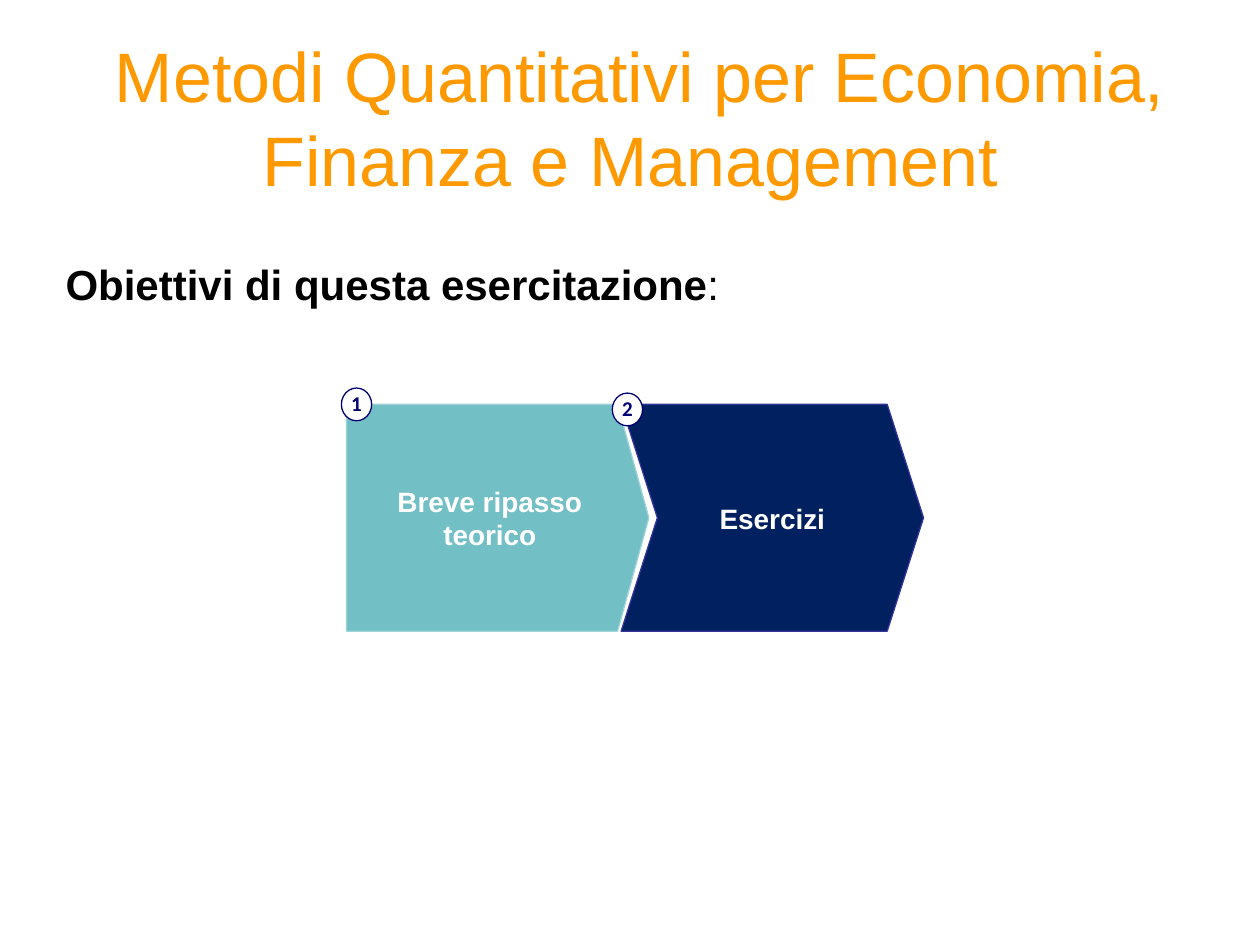
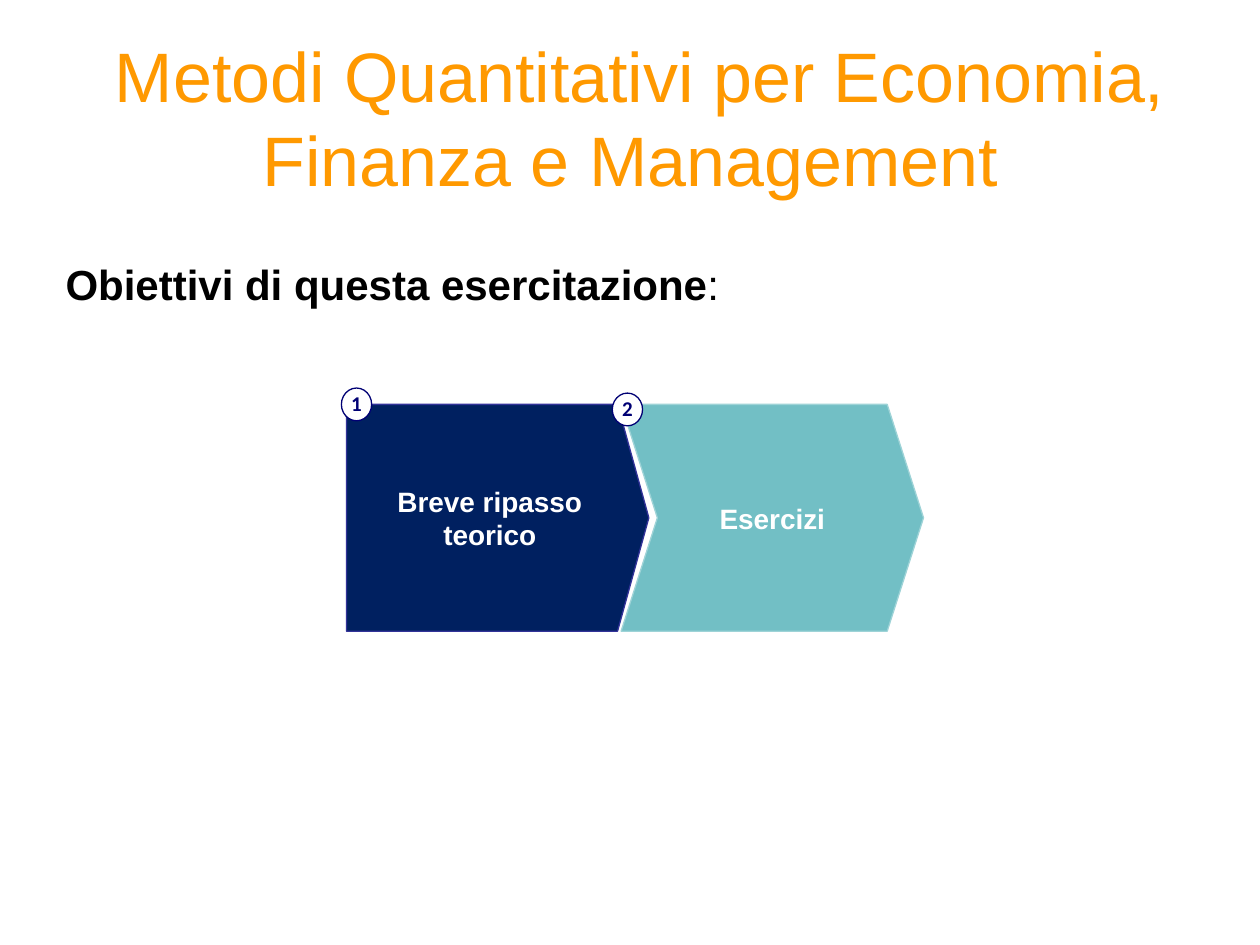
from dataclasses import dataclass

from lxml import etree
from pptx import Presentation
from pptx.dml.color import RGBColor
from pptx.enum import shapes, text
from pptx.oxml import ns
from pptx.util import Emu, Inches, Pt

COLUMNS, ROWS = 100, 75


@dataclass(frozen=True)
class Theme:
    heading: str = "FF9900"
    ink: str = "000000"
    paper: str = "FFFFFF"
    badge: str = "000074"
    active: tuple[str, str] = ("72BFC5", "9ED3D7")  # fill, line
    idle: tuple[str, str] = ("002060", "333399")
    font: str = "Arial"
    badge_font: str = "Calibri"
    heading_size: int = 40
    lead_size: int = 24
    step_size: int = 16
    badge_size: int = 12
    line_width: float = 0.75


@dataclass(frozen=True)
class Area:
    """Left, top, width and height in grid columns and rows."""
    left: float
    top: float
    width: float
    height: float


@dataclass(frozen=True)
class Step:
    label: str
    outline: shapes.MSO_SHAPE
    point: float
    area: Area
    badge: Area


THEME = Theme()
HEADING = " Metodi Quantitativi per Economia, Finanza e Management"
HEADING_AREA = Area(5, 3, 90, 12.5)
LEAD = "Obiettivi di questa esercitazione"
LEAD_AREA = Area(3.3, 20, 95, 35.3)
STEPS = (
    Step("Breve ripasso teorico", shapes.MSO_SHAPE.PENTAGON, 0.138,
         Area(27.5, 32.1, 24, 18), Area(27.1, 30.8, 2.4, 2.6)),
    Step("Esercizi", shapes.MSO_SHAPE.CHEVRON, 0.16,
         Area(49.3, 32.1, 24, 18), Area(48.6, 31.2, 2.4, 2.6)),
)


def place(prs, area: Area) -> tuple[Emu, Emu, Emu, Emu]:
    column, row = prs.slide_width / COLUMNS, prs.slide_height / ROWS
    return (Emu(round(area.left * column)), Emu(round(area.top * row)),
            Emu(round(area.width * column)), Emu(round(area.height * row)))


def move(prs, holder, area: Area) -> None:
    holder.left, holder.top, holder.width, holder.height = place(prs, area)


def add_run(paragraph, words: str, size: int, color: str,
            bold: bool = False, font: str = THEME.font) -> None:
    run = paragraph.add_run()
    run.text = words
    run.font.name, run.font.size, run.font.bold = font, Pt(size), bold
    run.font.color.rgb = RGBColor.from_string(color)


def add_figure(prs, slide, outline: shapes.MSO_SHAPE, area: Area, fill: str, line: str):
    figure = slide.shapes.add_shape(outline, *place(prs, area))
    figure.shadow.inherit = False
    figure.fill.solid()
    figure.fill.fore_color.rgb = RGBColor.from_string(fill)
    figure.line.color.rgb = RGBColor.from_string(line)
    figure.line.width = Pt(THEME.line_width)
    figure.text_frame.vertical_anchor = text.MSO_ANCHOR.MIDDLE
    figure.text_frame.paragraphs[0].alignment = text.PP_ALIGN.CENTER
    return figure


def add_heading(prs, slide) -> None:
    title = slide.shapes.title
    move(prs, title, HEADING_AREA)
    frame = title.text_frame
    frame.auto_size = text.MSO_AUTO_SIZE.NONE
    frame.vertical_anchor = text.MSO_ANCHOR.MIDDLE
    paragraph = frame.paragraphs[0]
    paragraph.alignment = text.PP_ALIGN.CENTER
    add_run(paragraph, HEADING, THEME.heading_size, THEME.heading)


def add_lead(prs, slide) -> None:
    body = slide.placeholders[1]
    move(prs, body, LEAD_AREA)
    body.text_frame.auto_size = text.MSO_AUTO_SIZE.NONE
    paragraph = body.text_frame.paragraphs[0]
    # Indented line without a bullet
    properties = paragraph._p.get_or_add_pPr()
    properties.set("marL", str(Inches(0.09)))
    properties.set("indent", "0")
    etree.SubElement(properties, ns.qn("a:buNone"))
    paragraph.space_before = Pt(0)
    add_run(paragraph, LEAD, THEME.lead_size, THEME.ink, bold=True)
    add_run(paragraph, ":", THEME.lead_size, THEME.ink)


def add_step(prs, slide, number: int, step: Step, active: bool) -> None:
    fill, line = THEME.active if active else THEME.idle
    arrow = add_figure(prs, slide, step.outline, step.area, fill, line)
    arrow.adjustments[0] = step.point
    frame = arrow.text_frame
    frame.word_wrap = True
    frame.margin_left = frame.margin_right = Inches(0.08)
    frame.margin_top = frame.margin_bottom = Inches(0.04)
    add_run(frame.paragraphs[0], step.label, THEME.step_size, THEME.paper, bold=True)

    # Numbered badge on the arrow's corner
    badge = add_figure(prs, slide, shapes.MSO_SHAPE.OVAL, step.badge,
                       THEME.paper, THEME.badge)
    badge.text_frame.word_wrap = False
    paragraph = badge.text_frame.paragraphs[0]
    paragraph.line_spacing = 0.9
    add_run(paragraph, str(number), THEME.badge_size, THEME.badge,
            bold=True, font=THEME.badge_font)


def add_agenda(prs, active_step: int) -> None:
    slide = prs.slides.add_slide(prs.slide_layouts[1])
    slide.background.fill.solid()
    slide.background.fill.fore_color.rgb = RGBColor.from_string(THEME.paper)
    add_heading(prs, slide)
    add_lead(prs, slide)
    for number, step in enumerate(STEPS, start=1):
        add_step(prs, slide, number, step, number == active_step)


def main() -> None:
    prs = Presentation()
    prs.slide_width, prs.slide_height = Inches(10), Inches(7.5)
    # One agenda slide per highlighted step
    for active_step in range(1, len(STEPS) + 1):
        add_agenda(prs, active_step)
    prs.save("out.pptx")


if __name__ == "__main__":
    main()
